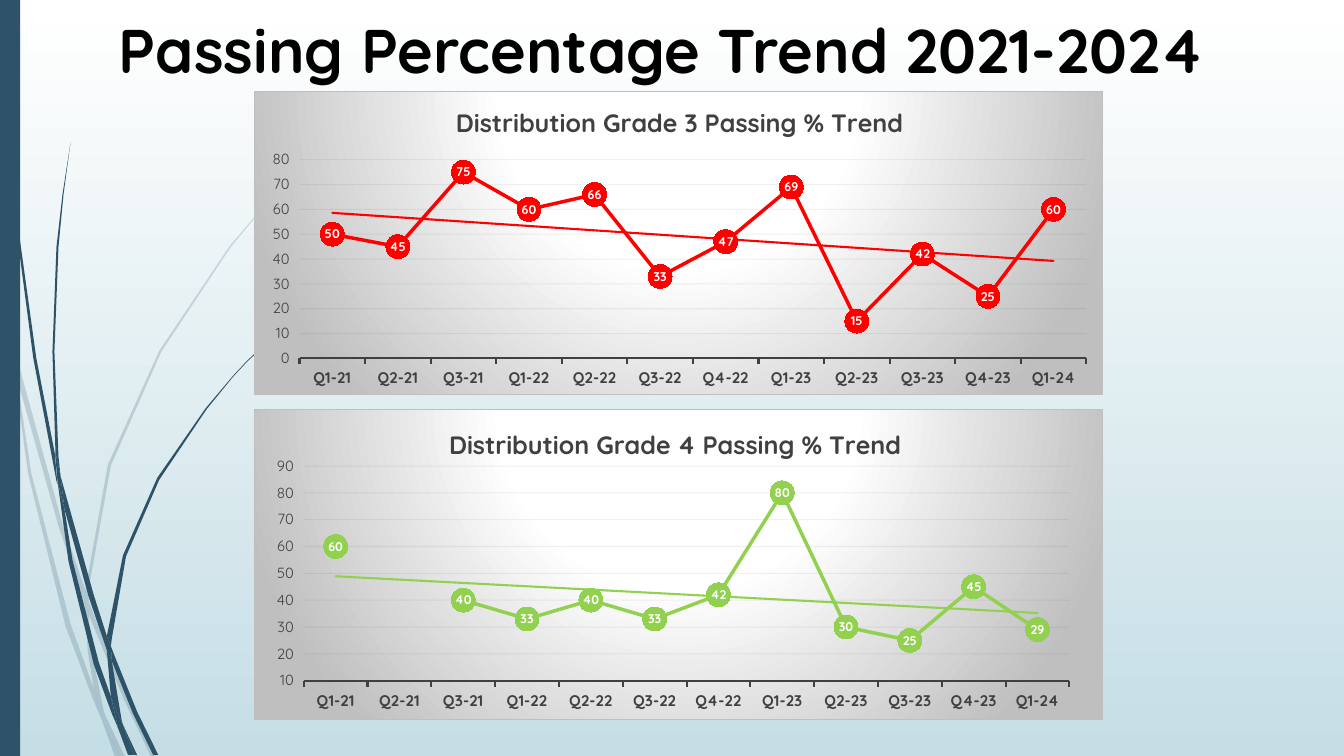
from lxml import etree
from pptx import Presentation
from pptx.chart.data import CategoryChartData
from pptx.dml.color import RGBColor
from pptx.enum import chart as ch, shapes, text
from pptx.oxml import parse_xml
from pptx.oxml.ns import nsdecls, qn
from pptx.util import Inches, Pt

FONT = "Quicksand"
NAVY, GREY, BORDER = "2E5369", "404040", "BFBFBF"
QUARTERS = ["Q1-21", "Q2-21", "Q3-21", "Q1-22", "Q2-22", "Q3-22",
            "Q4-22", "Q1-23", "Q2-23", "Q3-23", "Q4-23", "Q1-24"]

# Corner points of each blade of grass, in inches.
PALE_BLADES = [
    [(.11, 3.5), (.09, 3.22), (0, 2.82), (0, 2.99), (.1, 3.44)],
    [(.58, 5.22), (.84, 5.99), (.85, 5.86), (.62, 5.2), (.14, 3.45), (.17, 3.76)],
    [(.92, 6.07), (.88, 5.96), (.88, 6.1), (1.23, 6.94), (1.5, 7.51), (1.55, 7.51), (1.27, 6.92)],
    [(1.19, 7.51), (1.24, 7.51), (1.05, 7.11)],
    [(.93, 6.83), (.7, 6.19), (.31, 4.69), (.17, 3.76), (.11, 3.5), (.28, 4.7),
     (.65, 6.21), (.92, 6.93), (1.01, 7.14), (.99, 7.07)],
    [(.84, 5.99), (.87, 6.46), (.93, 6.83), (.96, 6.92), (1.05, 7.11), (1.03, 7.06),
     (.91, 6.46), (.88, 6.1), (.88, 6.08)],
    [(.88, 5.84), (1.1, 4.62), (1.6, 3.49), (2.29, 2.45), (2.68, 1.98), (2.9, 1.75),
     (3.12, 1.54), (3.12, 1.53), (2.89, 1.75), (2.68, 1.97), (2.28, 2.44), (1.58, 3.48),
     (1.07, 4.61), (.85, 5.84), (.85, 5.86), (.88, 5.96)],
    [(1.01, 7.14), (1.14, 7.51), (1.19, 7.51)],
    [(.88, 6.08), (.88, 6.1), (.88, 5.96), (.85, 5.86), (.84, 5.99)],
    [(.96, 6.92), (.93, 6.83), (.99, 7.07), (1.01, 7.14), (1.19, 7.51), (1.05, 7.11)],
]
DARK_BLADES = [
    [(.07, 1.1), (.17, 2.33), (.33, 3.55), (.56, 4.77), (.57, 4.81), (.55, 4.57),
     (.55, 4.53), (.36, 3.55), (.19, 2.32), (.08, 1.09), (.05, .48), (.04, 0), (.03, 0),
     (.04, .48)],
    [(.88, 5.92), (1.06, 6.45), (1.06, 6.33), (1.06, 6.31), (.93, 5.9), (.6, 4.72), (.64, 5.05)],
    [(1.13, 6.49), (1.1, 6.41), (1.11, 6.56), (1.32, 7.08), (1.52, 7.49), (1.57, 7.49),
     (1.36, 7.06)],
    [(1.1, 6.91), (.98, 6.57), (.72, 5.56), (.64, 5.05), (.57, 4.77), (.68, 5.57),
     (.93, 6.59), (1.11, 7.08), (1.17, 7.22), (1.16, 7.17)],
    [(.6, 4.72), (.58, 4.53), (.54, 3.49), (.58, 2.45), (.63, 1.93), (.7, 1.41),
     (.62, 1.93), (.56, 2.45), (.52, 3.49), (.55, 4.49)],
    [(1.33, 7.49), (1.36, 7.49), (1.22, 7.19)],
    [(.57, 4.77), (.64, 5.05), (.6, 4.72), (.55, 4.49), (.55, 4.53)],
    [(1.11, 6.33), (1.25, 5.52), (1.58, 4.76), (2.05, 4.06), (2.31, 3.74), (2.45, 3.59),
     (2.61, 3.44), (2.6, 3.44), (2.45, 3.58), (2.31, 3.73), (2.04, 4.05), (1.56, 4.74),
     (1.22, 5.51), (1.06, 6.31), (1.1, 6.41)],
    [(1.17, 7.22), (1.27, 7.49), (1.31, 7.49)],
    [(1.06, 6.45), (1.1, 6.91), (1.16, 7.06), (1.22, 7.19), (1.21, 7.16), (1.11, 6.56),
     (1.09, 6.51)],
    [(1.06, 6.45), (1.09, 6.51), (1.11, 6.56), (1.1, 6.41), (1.06, 6.31), (1.06, 6.33)],
    [(1.16, 7.06), (1.1, 6.91), (1.16, 7.17), (1.17, 7.22), (1.3, 7.49), (1.33, 7.49),
     (1.22, 7.19)],
]


def rgb(value):
    return RGBColor.from_string(value)


def assign(obj, **values):
    for name, value in values.items():
        setattr(obj, name, value)


def set_font(font, size, color, bold=False):
    assign(font, name=FONT, size=Pt(size), bold=bold)
    font.color.rgb = rgb(color)


def set_line(line, color, width):
    line.color.rgb = rgb(color)
    line.width = Pt(width)


def set_alpha(element, percent):
    color = next(element.iter(qn("a:srgbClr")))
    etree.SubElement(color, qn("a:alpha")).set("val", str(percent * 1000))


def add_blade(slide, corners, alpha=100):
    first, *rest = [(Inches(x), Inches(y)) for x, y in corners]
    builder = slide.shapes.build_freeform(*first)
    builder.add_line_segments(rest)
    paint(builder.convert_to_shape(), alpha)


def paint(sp, alpha=100):
    sp.shadow.inherit = False
    sp.fill.solid()
    sp.fill.fore_color.rgb = rgb(NAVY)
    sp.line.fill.background()
    if alpha < 100:
        set_alpha(sp._element.spPr, alpha)


def set_background(slide):
    fill = slide.background.fill
    fill.gradient()
    fill.gradient_angle = 270
    for stop, color, position in zip(fill.gradient_stops, ("FFFFFF", "C5DEE5"), (0, 1)):
        assign(stop, position=position)
        stop.color.rgb = rgb(color)


def set_title(slide, words):
    sp = slide.shapes.title
    assign(sp, left=Inches(.7), top=Inches(-.2), width=Inches(11.73), height=Inches(1.1))
    tf = sp.text_frame
    assign(tf, text=words, word_wrap=True, vertical_anchor=text.MSO_ANCHOR.BOTTOM)
    p = tf.paragraphs[0]
    p.alignment = text.PP_ALIGN.CENTER
    set_font(p.runs[0].font, 44, "000000", True)


def place(parent, before, percents, target=""):
    """Give a chart part a manual layout, in percent of the chart's size."""
    for old in parent.findall(qn("c:layout")):
        parent.remove(old)
    inner = f'<c:layoutTarget val="{target}"/>' if target else ""
    sizes = "".join(f'<c:{k} val="{v / 100:.3f}"/>' for k, v in zip("xywh", percents))
    parent.find(qn(before)).addprevious(parse_xml(
        f'<c:layout {nsdecls("c")}><c:manualLayout>{inner}<c:xMode val="edge"/>'
        f'<c:yMode val="edge"/>{sizes}</c:manualLayout></c:layout>'))


def fill_chart_area(chart):
    stops = "".join(f'<a:gs pos="{pos}000"><a:srgbClr val="{color}"/></a:gs>'
                    for pos, color in ((0, "FFFFFF"), (39, "FFFFFF"), (100, BORDER)))
    chart._chartSpace.find(qn("c:chart")).addnext(parse_xml(
        f'<c:spPr {nsdecls("c", "a")}><a:gradFill><a:gsLst>{stops}</a:gsLst>'
        '<a:path path="circle"><a:fillToRect l="50000" t="-80000" r="50000" b="180000"/>'
        f'</a:path></a:gradFill><a:ln w="9525"><a:solidFill><a:srgbClr val="{BORDER}"/>'
        '</a:solidFill></a:ln></c:spPr>'))


def add_trendline(series, color):
    series._element.find(qn("c:cat")).addprevious(parse_xml(
        f'<c:trendline {nsdecls("c", "a")}><c:spPr><a:ln w="19050" cap="rnd"><a:solidFill>'
        f'<a:srgbClr val="{color}"/></a:solidFill></a:ln></c:spPr>'
        '<c:trendlineType val="linear"/><c:dispRSqr val="0"/><c:dispEq val="0"/>'
        '</c:trendline>'))


def style_axes(chart, low, high):
    cat, val = chart.category_axis, chart.value_axis
    set_font(cat.tick_labels.font, 11, GREY, True)
    set_line(cat.format.line, GREY, 1.5)
    cat.major_tick_mark = ch.XL_TICK_MARK.OUTSIDE
    set_font(val.tick_labels.font, 10.5, GREY)
    assign(val, minimum_scale=low, maximum_scale=high, major_unit=10,
           major_tick_mark=ch.XL_TICK_MARK.OUTSIDE)
    val.format.line.fill.background()
    set_line(val.major_gridlines.format.line, "0D0D0D", .75)
    set_alpha(val._element.find(qn("c:majorGridlines")), 5)


def style_series(series, color):
    series.smooth = False
    set_line(series.format.line, color, 2.5)
    marker = series.marker
    assign(marker, style=ch.XL_MARKER_STYLE.CIRCLE, size=17)
    marker.format.fill.solid()
    marker.format.fill.fore_color.rgb = rgb(color)
    marker.format.line.fill.background()
    labels = series.data_labels
    assign(labels, show_value=True, position=ch.XL_LABEL_POSITION.CENTER)
    set_font(labels.font, 9, "FFFFFF", True)
    add_trendline(series, color)


def add_trend_chart(slide, grade, values, color, top, height, scale, title_at, plot_box):
    data = CategoryChartData()
    data.categories = QUARTERS
    data.add_series("Series 1", values)
    chart = slide.shapes.add_chart(
        ch.XL_CHART_TYPE.LINE_MARKERS, Inches(2.52), Inches(top),
        Inches(8.42), Inches(height), data).chart
    set_font(chart.font, 10, "000000")
    assign(chart, has_legend=False, has_title=True)
    title = chart.chart_title
    title.text_frame.text = f"Distribution Grade {grade} Passing % Trend"
    set_font(title.text_frame.paragraphs[0].runs[0].font, 18, GREY, True)
    place(title._element, "c:overlay", title_at)
    plot = chart.plots[0]
    plot.vary_by_categories = False
    place(plot._element.getparent(), "c:lineChart", plot_box, "inner")
    style_axes(chart, *scale)
    style_series(plot.series[0], color)
    fill_chart_area(chart)


def main():
    prs = Presentation()
    assign(prs, slide_width=Inches(13.33), slide_height=Inches(7.5))
    slide = prs.slides.add_slide(prs.slide_layouts[5])
    set_background(slide)
    for blades, alpha in ((PALE_BLADES, 20), (DARK_BLADES, 100)):
        for corners in blades:
            add_blade(slide, corners, alpha)
    paint(slide.shapes.add_shape(shapes.MSO_SHAPE.RECTANGLE, 0, 0, Inches(.2), Inches(7.5)))
    set_title(slide, "Passing Percentage Trend 2021-2024")
    add_trend_chart(slide, 3, [50, 45, 75, 60, 66, 33, 47, 69, 15, 42, 25, 60], "FF0000",
                    .9, 3.02, (0, 80), (23.2, 2.7), (5.3, 22.6, 92.8, 65.5))
    add_trend_chart(slide, 4, [60, None, 40, 33, 40, 33, 42, 80, 30, 25, 45, 29], "92D050",
                    4.06, 3.08, (10, 90), (22.4, 3.8), (5.8, 18.2, 90.3, 69.4))
    prs.save("out.pptx")


if __name__ == "__main__":
    main()
